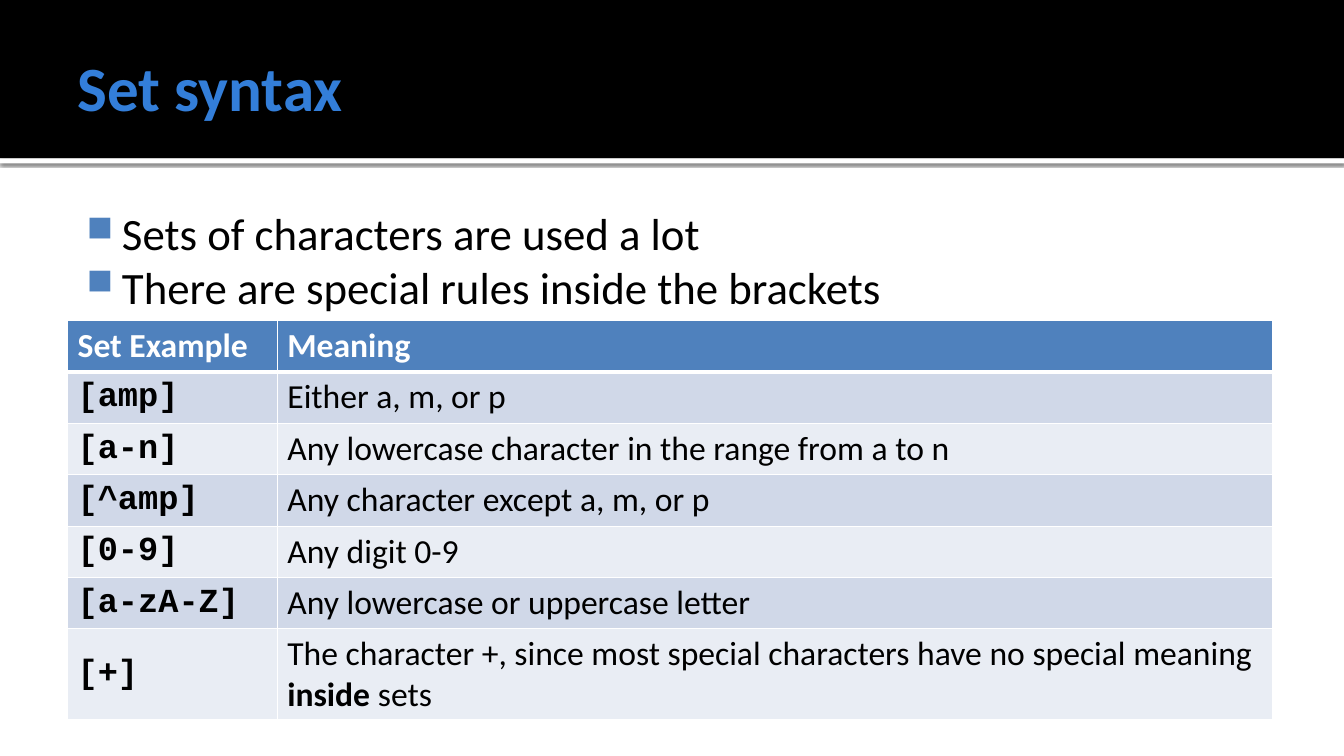
from pptx import Presentation
from pptx import util as u
from pptx.dml.color import RGBColor
from pptx.enum import shapes, text
from pptx.oxml import parse_xml
from pptx.oxml.ns import nsdecls

BLACK = RGBColor(0x00, 0x00, 0x00)
WHITE = RGBColor(0xFF, 0xFF, 0xFF)
TITLE_BLUE = RGBColor(0x33, 0x7E, 0xD9)
ACCENT = RGBColor(0x4F, 0x81, 0xBD)
BANDS = (RGBColor(0xD0, 0xD8, 0xE8), RGBColor(0xE9, 0xED, 0xF4))

BULLETS = ["Sets of characters are used a lot",
           "There are special rules inside the brackets"]
HEADER = ("Set Example", "Meaning")
# Each meaning is a list of (text, bold) runs
SETS = [
    ("[amp]", [("Either a, m, or p", False)]),
    ("[a-n]", [("Any lowercase character in the range from a to n", False)]),
    ("[^amp]", [("Any character except a, m, or p", False)]),
    ("[0-9]", [("Any digit 0-9", False)]),
    ("[a-zA-Z]", [("Any lowercase or uppercase letter", False)]),
    ("[+]", [("The character +, since most special characters have no "
              "special meaning ", False), ("inside", True), (" sets", False)]),
]


def set_font(r, size, color, bold=False, name="Calibri"):
    f = r.font
    f.name, f.size, f.bold = name, u.Pt(size), bold
    f.color.rgb = color


def set_insets(tf, left, top, right, bottom):
    tf.margin_left, tf.margin_top = u.Inches(left), u.Inches(top)
    tf.margin_right, tf.margin_bottom = u.Inches(right), u.Inches(bottom)


def add_bar(s, x, y, w, h, color):
    sp = s.shapes.add_shape(shapes.MSO_SHAPE.RECTANGLE, u.Inches(x),
                            u.Inches(y), u.Inches(w), u.Inches(h))
    sp.shadow.inherit = False
    sp.fill.solid()
    sp.fill.fore_color.rgb = color
    sp.line.fill.background()
    return sp


def add_title_band(s, x, y, w, h):
    # White rule with a soft shadow, then the black band
    rule = add_bar(s, x, y + h, w, 0.05, WHITE)
    effects = rule._element.spPr.find(
        "{http://schemas.openxmlformats.org/drawingml/2006/main}effectLst")
    effects.append(parse_xml(
        f'<a:outerShdw {nsdecls("a")} blurRad="{u.Pt(2.5)}" '
        f'dist="{u.Pt(0.8)}" dir="5400000" algn="t" rotWithShape="0">'
        '<a:srgbClr val="000000"><a:alpha val="60000"/></a:srgbClr>'
        '</a:outerShdw>'))
    add_bar(s, x, y, w, h, BLACK)

    # Title, brought in front of the band
    title = s.shapes.title
    title._element.getparent().append(title._element)
    title.left, title.top = u.Inches(x + 0.67), u.Inches(y + 0.17)
    title.width, title.height = u.Inches(12), u.Inches(1.37)
    tf = title.text_frame
    tf.text = "Set syntax"
    tf.auto_size = text.MSO_AUTO_SIZE.NONE
    tf.vertical_anchor = text.MSO_ANCHOR.MIDDLE
    set_insets(tf, 0.1, 0.05, 0.05, 0.05)
    p = tf.paragraphs[0]
    p.alignment = text.PP_ALIGN.LEFT
    set_font(p.runs[0], 45, TITLE_BLUE, True)


def add_bullets(s, x, y, w, h):
    sp = s.shapes.add_textbox(u.Inches(x), u.Inches(y), u.Inches(w), u.Inches(h))
    tf = sp.text_frame
    tf.word_wrap = True
    set_insets(tf, 0.06, 0.1, 0.1, 0.05)
    tf.text = "\n".join(BULLETS)
    for p in tf.paragraphs:
        set_font(p.runs[0], 32, BLACK)
        pPr = p._p.get_or_add_pPr()
        pPr.set("marL", str(u.Inches(0.48)))
        pPr.set("indent", str(u.Inches(-0.35)))
        for xml in (f'<a:buClr {nsdecls("a")}><a:srgbClr val="{ACCENT}"/></a:buClr>',
                    f'<a:buSzPct {nsdecls("a")} val="80000"/>',
                    f'<a:buChar {nsdecls("a")} char="■"/>'):
            pPr.append(parse_xml(xml))


def style_cell(cell, fill, bottom=1):
    cell.fill.solid()
    cell.fill.fore_color.rgb = fill
    tcPr = cell._tc.get_or_add_tcPr()
    # Borders come before the fill
    for i, (side, width) in enumerate(
            (("lnL", 1), ("lnR", 1), ("lnT", 1), ("lnB", bottom))):
        tcPr.insert(i, parse_xml(
            f'<a:{side} {nsdecls("a")} w="{u.Pt(width)}"><a:solidFill>'
            f'<a:srgbClr val="{WHITE}"/></a:solidFill></a:{side}>'))


def add_set_table(s, x, y, w, h):
    row_h, first_w = 0.51, 2.08
    table = s.shapes.add_table(len(SETS) + 1, 2, u.Inches(x), u.Inches(y),
                               u.Inches(w), u.Inches(h)).table
    table.columns[0].width = u.Inches(first_w)
    table.columns[1].width = u.Inches(w - first_w)
    for row in table.rows:
        row.height = u.Inches(row_h)
    table.rows[len(SETS)].height = u.Inches(h - row_h * len(SETS))

    # Header row
    for cell, label in zip(table.rows[0].cells, HEADER):
        style_cell(cell, ACCENT, bottom=3)
        cell.text_frame.text = label
        set_font(cell.text_frame.paragraphs[0].runs[0], 24, WHITE, True)

    # Sets and their meanings
    for i, (example, meaning) in enumerate(SETS):
        left, right = table.rows[i + 1].cells
        for cell in (left, right):
            style_cell(cell, BANDS[i % 2], bottom=1)
        # The thick rule under the header is shared with the first row
        if i == 0:
            for cell in (left, right):
                cell._tc.tcPr[2].set("w", str(u.Pt(3)))
        left.text_frame.text = example
        left.vertical_anchor = text.MSO_ANCHOR.MIDDLE
        set_font(left.text_frame.paragraphs[0].runs[0], 24, BLACK, True,
                 "Courier New")
        p = right.text_frame.paragraphs[0]
        for words, bold in meaning:
            r = p.add_run()
            r.text = words
            set_font(r, 24, BLACK, bold)


def main():
    prs = Presentation()
    prs.slide_width, prs.slide_height = u.Inches(13.33), u.Inches(7.5)
    s = prs.slides.add_slide(prs.slide_layouts[5])
    add_title_band(s, 0, 0, 13.33, 1.57)
    add_bullets(s, 0.67, 1.94, 12, 1.24)
    add_set_table(s, 0.67, 3.18, 11.95, 3.96)
    prs.save("out.pptx")


if __name__ == "__main__":
    main()
